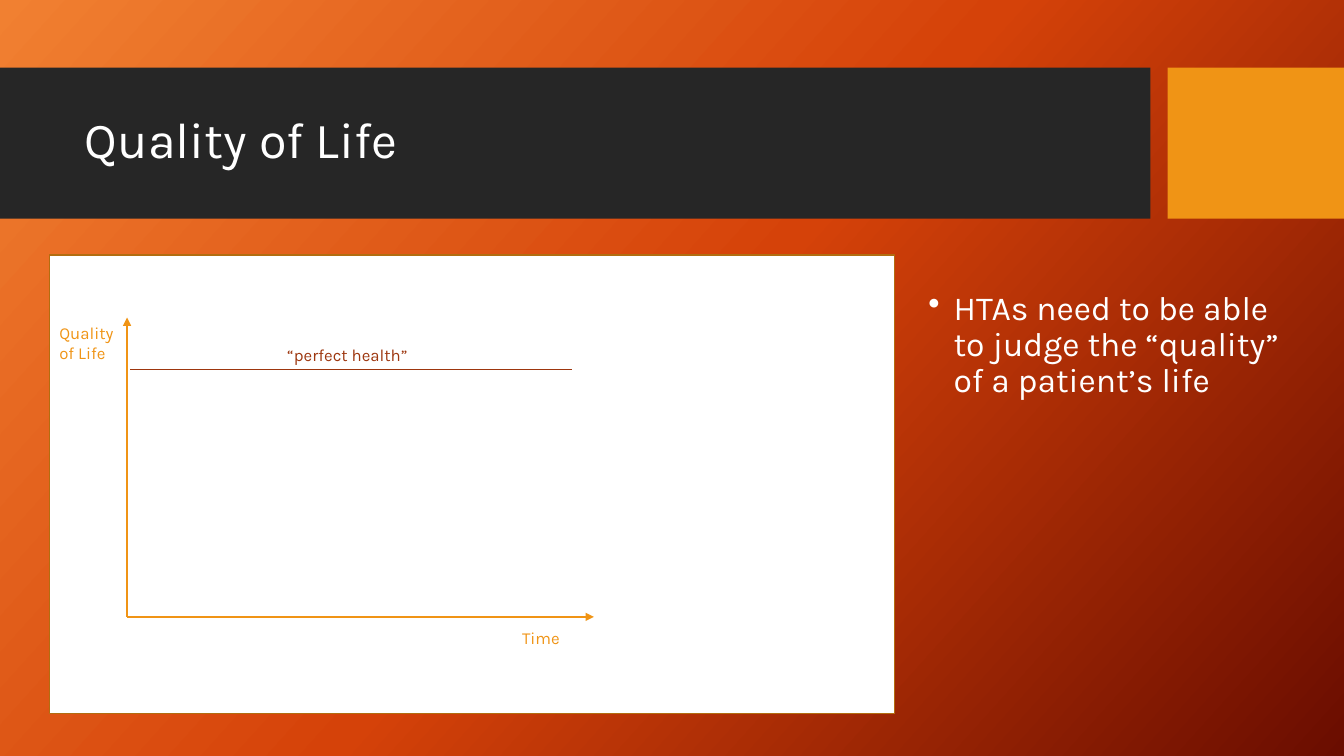
from copy import deepcopy
from dataclasses import dataclass
from typing import Optional

from pptx import Presentation
from pptx.dml.color import RGBColor
from pptx.enum.shapes import MSO_CONNECTOR as Link, MSO_SHAPE as Shape
from pptx.enum.text import MSO_ANCHOR as Anchor, MSO_AUTO_SIZE as AutoSize, PP_ALIGN as Align
from pptx.oxml.ns import qn
from pptx.oxml.xmlchemy import OxmlElement
from pptx.slide import Slide
from pptx.text.text import TextFrame
from pptx.util import Inches, Pt


@dataclass(frozen=True)
class Theme:
    font: str = "Karla"
    white: str = "FFFFFF"
    dark: str = "262626"
    amber: str = "F09415"
    rust: str = "9D360E"
    panel_edge: str = "B26D10"
    gradient: tuple = ((0, "F18031"), (0.5, "D54209"), (1, "6A0D00"))
    gradient_angle: int = 42
    title_size: int = 36
    body_size: int = 24
    label_size: int = 12


@dataclass(frozen=True)
class Area:
    left: float
    top: float
    width: float
    height: float

    def lengths(self) -> tuple:
        return tuple(Inches(v) for v in (self.left, self.top, self.width, self.height))


@dataclass(frozen=True)
class Block:
    area: Area
    fill: str
    edge: Optional[str] = None


@dataclass(frozen=True)
class Stroke:
    start: tuple
    end: tuple
    color: str
    weight: float
    arrow: bool = False


@dataclass(frozen=True)
class Label:
    area: Area
    text: str
    color: str
    size: int
    bullet: bool = False


THEME = Theme()
ORIGIN = (1.26, 6.12)
BARS = (
    Block(Area(0, 0.67, 11.41, 1.5), THEME.dark),
    Block(Area(11.58, 0.67, 1.75, 1.5), THEME.amber),
)
PANEL = Block(Area(0.49, 2.53, 8.38, 4.55), THEME.white, THEME.panel_edge)
STROKES = (
    Stroke(ORIGIN, (ORIGIN[0], 3.15), THEME.amber, 1.75, arrow=True),
    Stroke(ORIGIN, (5.89, ORIGIN[1]), THEME.amber, 1.75, arrow=True),
    Stroke((1.29, 3.67), (5.67, 3.67), THEME.rust, 0.75),
)
TITLE = Label(Area(0.74, 0.82, 10.51, 1.18), "Quality of Life", THEME.white, THEME.title_size)
LABELS = (
    Label(Area(9.11, 2.84, 3.73, 3.64),
          "HTAs need to be able to judge the “quality” of a patient’s life",
          THEME.white, THEME.body_size, bullet=True),
    Label(Area(0.49, 3.15, 0.8, 0.52), "Quality of Life", THEME.amber, THEME.label_size),
    Label(Area(5.08, 6.18, 0.8, 0.3), "Time", THEME.amber, THEME.label_size),
    Label(Area(2.75, 3.37, 1.81, 0.3), "“perfect health”", THEME.rust, THEME.label_size),
)


def paint_background(page: Slide) -> None:
    fill = page.background.fill
    fill.gradient()
    fill.gradient_angle = 360 - THEME.gradient_angle
    stop_list = page.element.xpath(".//a:gsLst")[0]
    stop_list.insert(1, deepcopy(stop_list[0]))
    for stop, (position, color) in zip(fill.gradient_stops, THEME.gradient):
        stop.position = position
        stop.color.rgb = RGBColor.from_string(color)


def draw_block(page: Slide, block: Block) -> None:
    shape = page.shapes.add_shape(Shape.RECTANGLE, *block.area.lengths())
    shape.shadow.inherit = False
    shape.fill.solid()
    shape.fill.fore_color.rgb = RGBColor.from_string(block.fill)
    if block.edge:
        shape.line.color.rgb = RGBColor.from_string(block.edge)
        shape.line.width = Pt(1)
    else:
        shape.line.fill.background()


def draw_stroke(page: Slide, stroke: Stroke) -> None:
    ends = [Inches(v) for v in stroke.start + stroke.end]
    connector = page.shapes.add_connector(Link.STRAIGHT, *ends)
    connector.line.color.rgb = RGBColor.from_string(stroke.color)
    connector.line.width = Pt(stroke.weight)
    properties = connector.element.spPr
    if stroke.arrow:
        head = OxmlElement("a:tailEnd")
        head.set("type", "triangle")
        properties.find(qn("a:ln")).append(head)
    properties.append(OxmlElement("a:effectLst"))


def write_text(frame: TextFrame, label: Label) -> None:
    frame.word_wrap = True
    frame.auto_size = AutoSize.NONE
    para = frame.paragraphs[0]
    para.alignment = Align.LEFT
    if label.size > THEME.label_size:
        para.line_spacing = 0.9
    if label.bullet:
        properties = para._p.get_or_add_pPr()
        properties.set("marL", str(Inches(0.25)))
        properties.set("indent", str(Inches(-0.25)))
        bullet = OxmlElement("a:buChar")
        bullet.set("char", "•")
        properties.append(bullet)
    span = para.add_run()
    span.text = label.text
    span.font.name = THEME.font
    span.font.size = Pt(label.size)
    span.font.color.rgb = RGBColor.from_string(label.color)


def place_title(page: Slide) -> None:
    title = page.shapes.title
    title.left, title.top, title.width, title.height = TITLE.area.lengths()
    title.text_frame.vertical_anchor = Anchor.MIDDLE
    write_text(title.text_frame, TITLE)
    page.shapes.element.append(title.element)


def main() -> None:
    deck = Presentation()
    deck.slide_width, deck.slide_height = Inches(13.33), Inches(7.5)
    page = deck.slides.add_slide(deck.slide_layouts[5])
    paint_background(page)
    for bar in BARS:
        draw_block(page, bar)
    place_title(page)
    draw_block(page, PANEL)
    for stroke in STROKES:
        draw_stroke(page, stroke)
    for label in LABELS:
        box = page.shapes.add_textbox(*label.area.lengths())
        write_text(box.text_frame, label)
    deck.save("out.pptx")


if __name__ == "__main__":
    main()
